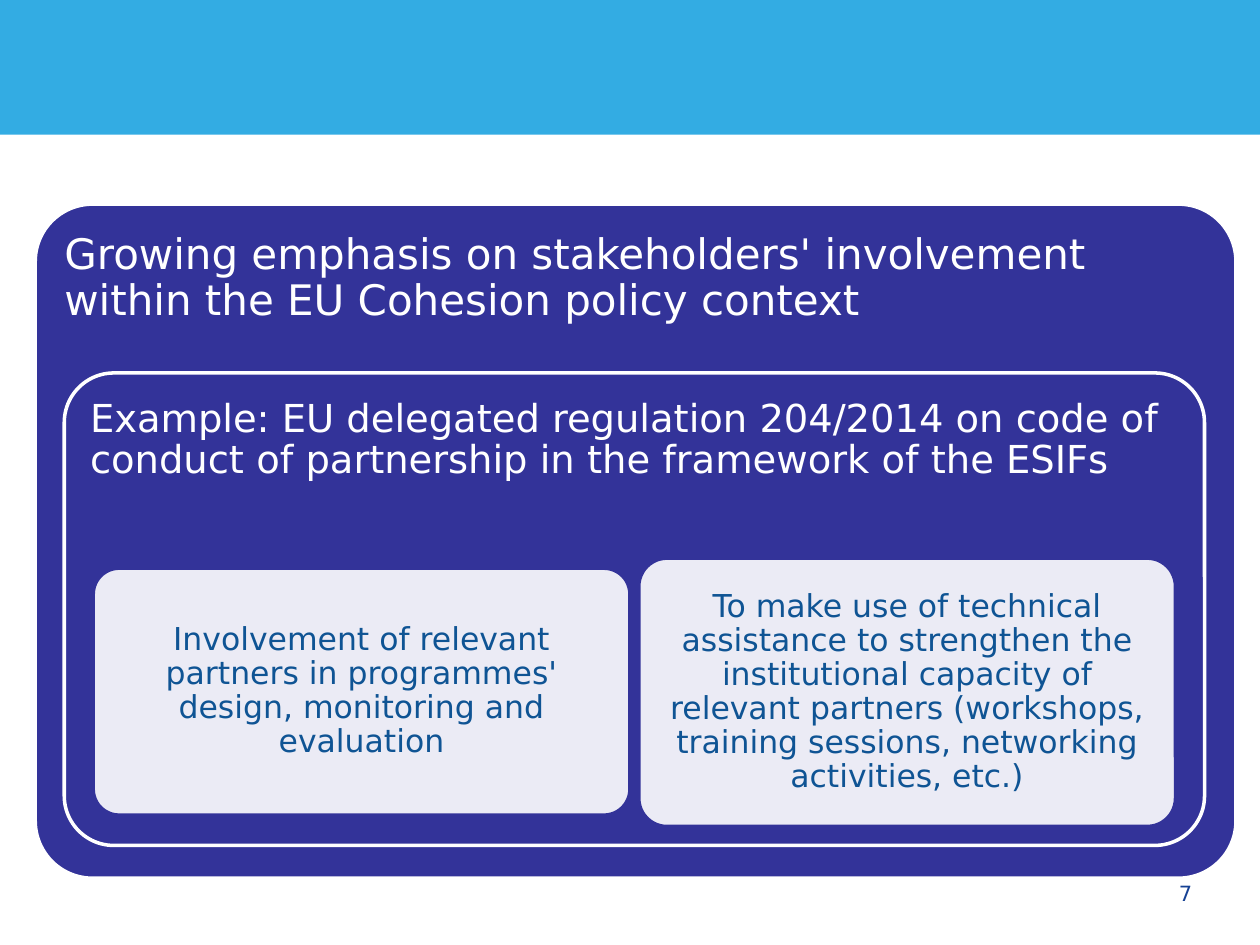
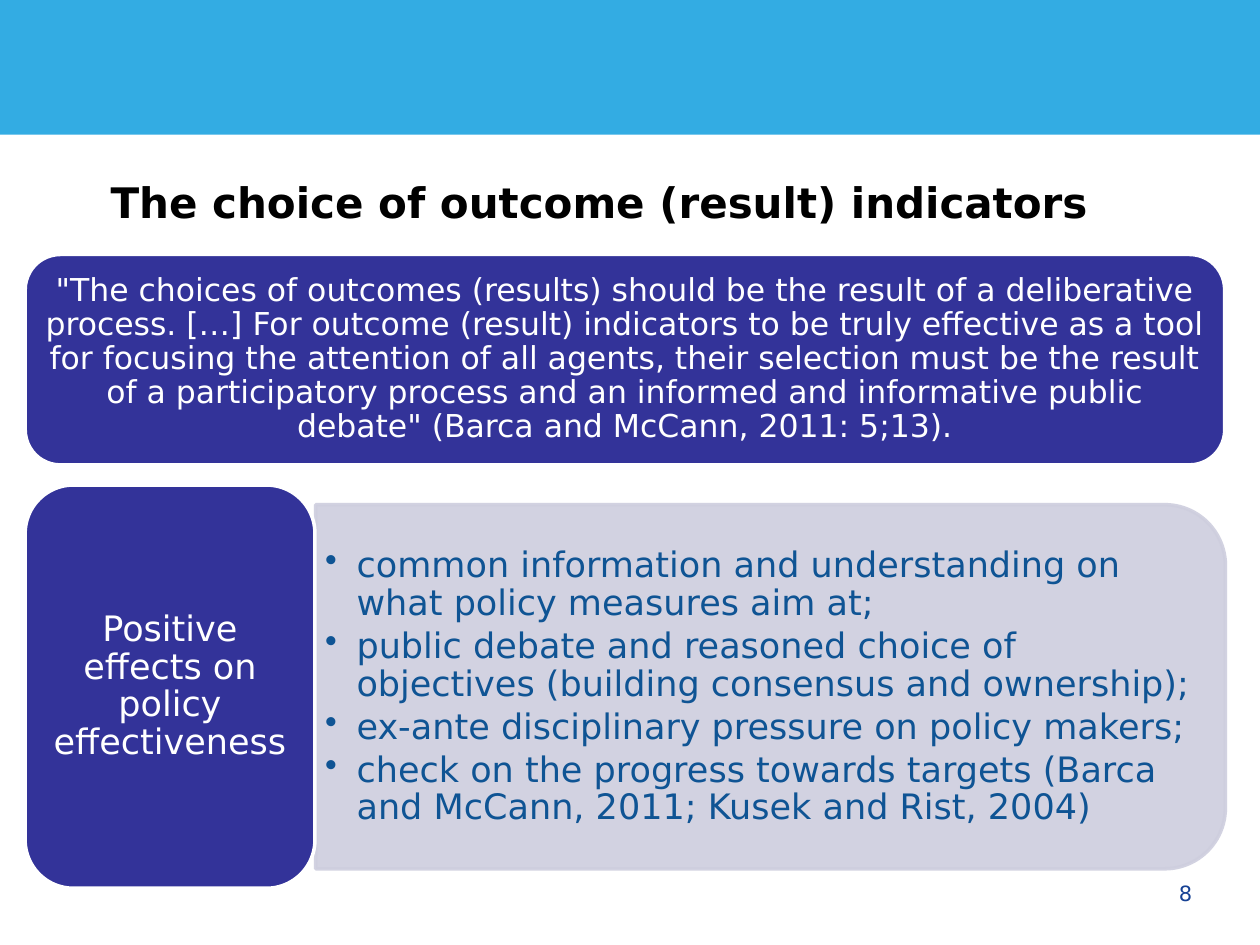
from lxml import etree
from pptx import Presentation
from pptx.dml.color import RGBColor
from pptx.enum import shapes, text
from pptx.oxml import ns
from pptx.util import Inches, Pt

SKY = RGBColor(0x33, 0xAC, 0xE3)
INDIGO = RGBColor(0x33, 0x33, 0x99)
LAVENDER = RGBColor(0xCE, 0xCE, 0xDE)
WHITE = RGBColor(0xFF, 0xFF, 0xFF)
BLACK = RGBColor(0, 0, 0)
BLUE = RGBColor(0x0F, 0x54, 0x94)
NAVY = RGBColor(0x16, 0x41, 0x94)
FONT = "DejaVu Sans"

ROUNDED = shapes.MSO_SHAPE.ROUNDED_RECTANGLE
LEFT, CENTER, RIGHT = (text.PP_ALIGN.LEFT, text.PP_ALIGN.CENTER,
                       text.PP_ALIGN.RIGHT)
TOP, MIDDLE = text.MSO_ANCHOR.TOP, text.MSO_ANCHOR.MIDDLE


class Deck:
    def __init__(self, first_number):
        self.prs = Presentation()
        self.prs.slide_width, self.prs.slide_height = Inches(10), Inches(7.5)
        self.number = first_number
        self.slide = None

    def new_slide(self):
        self.slide = self.prs.slides.add_slide(self.prs.slide_layouts[6])
        self.box((0, 0, 10, 1.07), SKY, None, kind=shapes.MSO_SHAPE.RECTANGLE)
        self.label((7.23, 6.9, 2.33, 0.4), [str(self.number)], 12, NAVY,
                   align=RIGHT, inset=(0.1, 0))
        self.number += 1

    def fade(self, fill, opacity):
        solid = fill._xPr.find(ns.qn("a:solidFill"))
        etree.SubElement(solid[0], ns.qn("a:alpha"), val=str(opacity * 1000))

    def box(self, at, fill, line, kind=ROUNDED, corner=None, opacity=100):
        box = self.slide.shapes.add_shape(kind, *map(Inches, at))
        box.shadow.inherit = False
        if corner is not None:
            box.adjustments[0] = corner
        box.fill.solid()
        box.fill.fore_color.rgb = fill
        if opacity < 100:
            self.fade(box.fill, opacity)
        if line is None:
            box.line.fill.background()
        else:
            box.line.color.rgb = line
            box.line.width = Pt(2)
        return box

    def set_text(self, shape, lines, size, color, align=CENTER, anchor=MIDDLE,
                 inset=(0.08, 0.04), bold=False):
        frame = shape.text_frame
        frame.word_wrap = True
        frame.vertical_anchor = anchor
        frame.margin_left = frame.margin_right = Inches(inset[0])
        frame.margin_top = frame.margin_bottom = Inches(inset[1])
        frame.text = "\n".join(lines)
        for paragraph in frame.paragraphs:
            paragraph.alignment = align
            paragraph.line_spacing = 0.9
            for run in paragraph.runs:
                run.font.name = FONT
                run.font.size = Pt(size)
                run.font.bold = bold
                run.font.color.rgb = color

    def label(self, at, lines, size, color, **style):
        label = self.slide.shapes.add_textbox(*map(Inches, at))
        self.set_text(label, lines, size, color, **style)
        return label

    def panel(self, at, words, size, corner=None, **style):
        panel = self.box(at, INDIGO, WHITE, corner=corner)
        self.set_text(panel, [words], size, WHITE, **style)

    def card(self, at, words):
        card = self.box(at, WHITE, INDIGO, corner=0.105, opacity=90)
        self.set_text(card, [words], 18, BLUE, inset=(0.07, 0.07))

    def bullets(self, at, lines, size, color):
        bullets = self.label(at, lines, size, color, align=LEFT)
        for paragraph in bullets.text_frame.paragraphs:
            paragraph.space_after = Pt(3)
            properties = paragraph._p.get_or_add_pPr()
            properties.set("marL", str(Inches(0.25)))
            properties.set("indent", str(Inches(-0.25)))
            etree.SubElement(properties, ns.qn("a:buChar"), char="•")


def partnership_slide(deck):
    deck.new_slide()
    deck.panel((0.28, 1.62, 9.53, 5.35),
               "Growing emphasis on stakeholders' involvement within the EU "
               "Cohesion policy context",
               24, corner=0.085, align=LEFT, anchor=TOP, inset=(0.1, 0.1))
    deck.panel((0.51, 2.96, 9.05, 3.75),
               "Example: EU delegated regulation 204/2014 on code of conduct "
               "of partnership in the framework of the ESIFs",
               22, corner=0.105, align=LEFT, anchor=TOP, inset=(0.09, 0.09))
    deck.card((0.74, 4.51, 4.26, 1.96),
              "Involvement of relevant partners in programmes' design, "
              "monitoring and evaluation")
    deck.card((5.07, 4.43, 4.26, 2.13),
              "To make use of technical assistance to strengthen the "
              "institutional capacity of relevant partners (workshops, "
              "training sessions, networking activities, etc.)")


def indicators_slide(deck):
    deck.new_slide()
    deck.label((0.78, 1.34, 8.36, 0.57),
               ["The choice of outcome (result) indicators"], 24, BLACK,
               align=LEFT, inset=(0.1, 0.1), bold=True)
    deck.panel((0.2, 2.02, 9.52, 1.67),
               '"The choices of outcomes (results) should be the result of a '
               "deliberative process. […] For outcome (result) indicators to "
               "be truly effective as a tool for focusing the attention of "
               "all agents, their selection must be the result of a "
               "participatory process and an informed and informative public "
               'debate" (Barca and McCann, 2011: 5;13).',
               18, inset=(0.07, 0.04))
    effects = deck.box((4.67, 1.84, 2.89, 7.22), LAVENDER, LAVENDER,
                       kind=shapes.MSO_SHAPE.ROUND_2_SAME_RECTANGLE,
                       opacity=90)
    effects.rotation = 90
    deck.fade(effects.line.fill, 90)
    deck.bullets((2.5, 4.15, 7.08, 2.61), [
        "common information and understanding on what policy measures aim at;",
        "public debate and reasoned choice of objectives (building consensus "
        "and ownership);",
        "ex-ante disciplinary pressure on policy makers;",
        "check on the progress towards targets (Barca and McCann, 2011; Kusek "
        "and Rist, 2004)",
    ], 20, BLUE)
    deck.panel((0.2, 3.85, 2.3, 3.2),
               "Positive effects on policy effectiveness", 20)


def main():
    deck = Deck(first_number=7)
    partnership_slide(deck)
    indicators_slide(deck)
    deck.prs.save("out.pptx")


if __name__ == "__main__":
    main()
